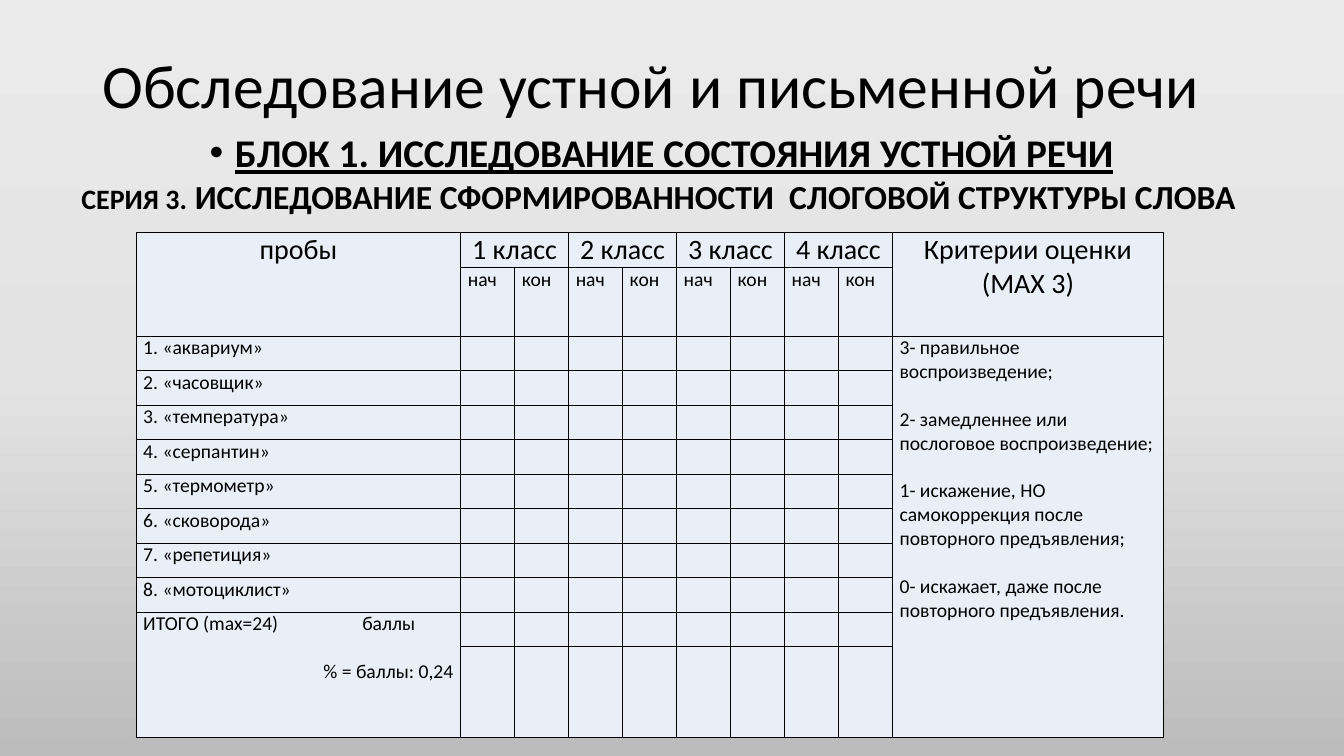
from lxml import etree
from pptx import Presentation
from pptx.dml.color import RGBColor
from pptx.enum.text import MSO_ANCHOR, PP_ALIGN
from pptx.oxml.ns import qn
from pptx.util import Cm, Pt

BLACK = RGBColor(0x00, 0x00, 0x00)
PALE = RGBColor(0xEA, 0xEF, 0xF7)
SHADES = [(0, RGBColor(0xEB, 0xEA, 0xEA)), (50, RGBColor(0xE4, 0xE3, 0xE3)),
          (100, RGBColor(0xBD, 0xBC, 0xBC))]
LEFT, MID, RIGHT, FULL = PP_ALIGN.LEFT, PP_ALIGN.CENTER, PP_ALIGN.RIGHT, PP_ALIGN.JUSTIFY
MIDDLE = MSO_ANCHOR.MIDDLE
FONT = "Calibri"


def add_run(par, text, size, bold=False, line=False):
    run = par.add_run()
    run.text = text
    font = run.font
    font.name, font.size = FONT, Pt(size)
    font.bold, font.underline = bold, line
    font.color.rgb = BLACK


def add_par(frame, align, gap=0):
    par = frame.paragraphs[0]
    if par.runs:
        par = frame.add_paragraph()
    par.alignment = align
    par.space_before = Pt(gap)
    return par


deck = Presentation()
deck.slide_width, deck.slide_height = Cm(33.87), Cm(19.05)
slide = deck.slides.add_slide(deck.slide_layouts[6])

# Background: three grey stops from top to bottom
back = slide.background.fill
back.gradient()
back.gradient_angle = 270
stops = next(slide.element.iter(qn("a:gsLst")))
for stop in list(stops):
    stops.remove(stop)
for place, shade in SHADES:
    stop = etree.SubElement(stops, qn("a:gs"), pos=str(place * 1000))
    etree.SubElement(stop, qn("a:srgbClr"), val=str(shade))

# Title
title = slide.shapes.add_textbox(Cm(2.33), Cm(1.01), Cm(29.21), Cm(2.44)).text_frame
title.word_wrap = True
title.vertical_anchor = MIDDLE
par = add_par(title, LEFT)
par.line_spacing = 0.9
add_run(par, "Обследование устной и письменной речи", 44)

# Block and series headings
heads = slide.shapes.add_textbox(Cm(1.8), Cm(3.12), Cm(29.74), Cm(14.05)).text_frame
heads.word_wrap = True
par = add_par(heads, MID)
add_run(par, "БЛОК 1. ИССЛЕДОВАНИЕ СОСТОЯНИЯ УСТНОЙ РЕЧИ", 28, True, True)
props = par._p.get_or_add_pPr()
props.set("marL", str(Cm(0.64)))
props.set("indent", str(Cm(-0.64)))
etree.SubElement(props, qn("a:buFont"), typeface="Arial")
etree.SubElement(props, qn("a:buChar"), char="•")
par = add_par(heads, FULL)
add_run(par, "СЕРИЯ 3.", 20, True)
add_run(par, " ИССЛЕДОВАНИЕ СФОРМИРОВАННОСТИ  СЛОГОВОЙ СТРУКТУРЫ СЛОВА", 24, True)

# Table grid
widths = [8.18] + [1.36] * 8 + [6.83]
heights = [0.88, 1.73] + [0.87] * 9 + [2.28]
table = slide.shapes.add_table(len(heights), len(widths), Cm(3.43), Cm(5.86),
                               Cm(sum(widths)), Cm(sum(heights))).table
table.first_row = table.horz_banding = False
for col, width in zip(table.columns, widths):
    col.width = Cm(width)
for row, height in zip(table.rows, heights):
    row.height = Cm(height)

# Cell fill, margins and borders
for cell in table.iter_cells():
    cell.fill.solid()
    cell.fill.fore_color.rgb = PALE
    cell.margin_left = cell.margin_right = Cm(0.18)
    cell.margin_top = cell.margin_bottom = 0
    props = cell._tc.get_or_add_tcPr()
    for spot, side in enumerate(("a:lnL", "a:lnR", "a:lnT", "a:lnB")):
        edge = etree.Element(qn(side), w=str(Pt(1)))
        paint = etree.SubElement(edge, qn("a:solidFill"))
        etree.SubElement(paint, qn("a:srgbClr"), val=str(BLACK))
        props.insert(spot, edge)

# Merged cells
for top, left, end, edge in [(0, 0, 1, 0), (0, 9, 1, 9), (2, 9, 11, 9), (10, 0, 11, 0)]:
    table.cell(top, left).merge(table.cell(end, edge))

# Header: tests, four grades with start and end, criteria
for left, text in [(0, "пробы"), (9, "Критерии оценки (MAX 3)")]:
    add_run(add_par(table.cell(0, left).text_frame, MID), text, 20)
for grade in range(1, 5):
    left = 2 * grade - 1
    table.cell(0, left).merge(table.cell(0, left + 1))
    add_run(add_par(table.cell(0, left).text_frame, MID), f"{grade} класс", 20)
    for step, term in enumerate(("нач", "кон")):
        add_run(add_par(table.cell(1, left + step).text_frame, FULL), term, 14)

# Test words
words = ["аквариум", "часовщик", "температура", "серпантин",
         "термометр", "сковорода", "репетиция", "мотоциклист"]
for num, word in enumerate(words, 1):
    add_run(add_par(table.cell(num + 1, 0).text_frame, FULL), f"{num}. «{word}»", 14)

# Scoring criteria
marks = ["3- правильное воспроизведение;",
         "2- замедленнее или послоговое воспроизведение;",
         "1- искажение, НО самокоррекция после повторного предъявления;",
         "0- искажает, даже после повторного предъявления."]
for num, mark in enumerate(marks):
    add_run(add_par(table.cell(2, 9).text_frame, LEFT, 17 if num else 0), mark, 14)

# Total: points at a tab stop, percent at the right
total = table.cell(10, 0).text_frame
par = add_par(total, LEFT)
add_run(par, "ИТОГО (max=24)\tбаллы", 14)
tabs = etree.SubElement(par._p.get_or_add_pPr(), qn("a:tabLst"))
etree.SubElement(tabs, qn("a:tab"), pos=str(Cm(5.52)), algn="l")
add_run(add_par(total, RIGHT, 17), "% = баллы: 0,24", 14)

deck.save("out.pptx")
